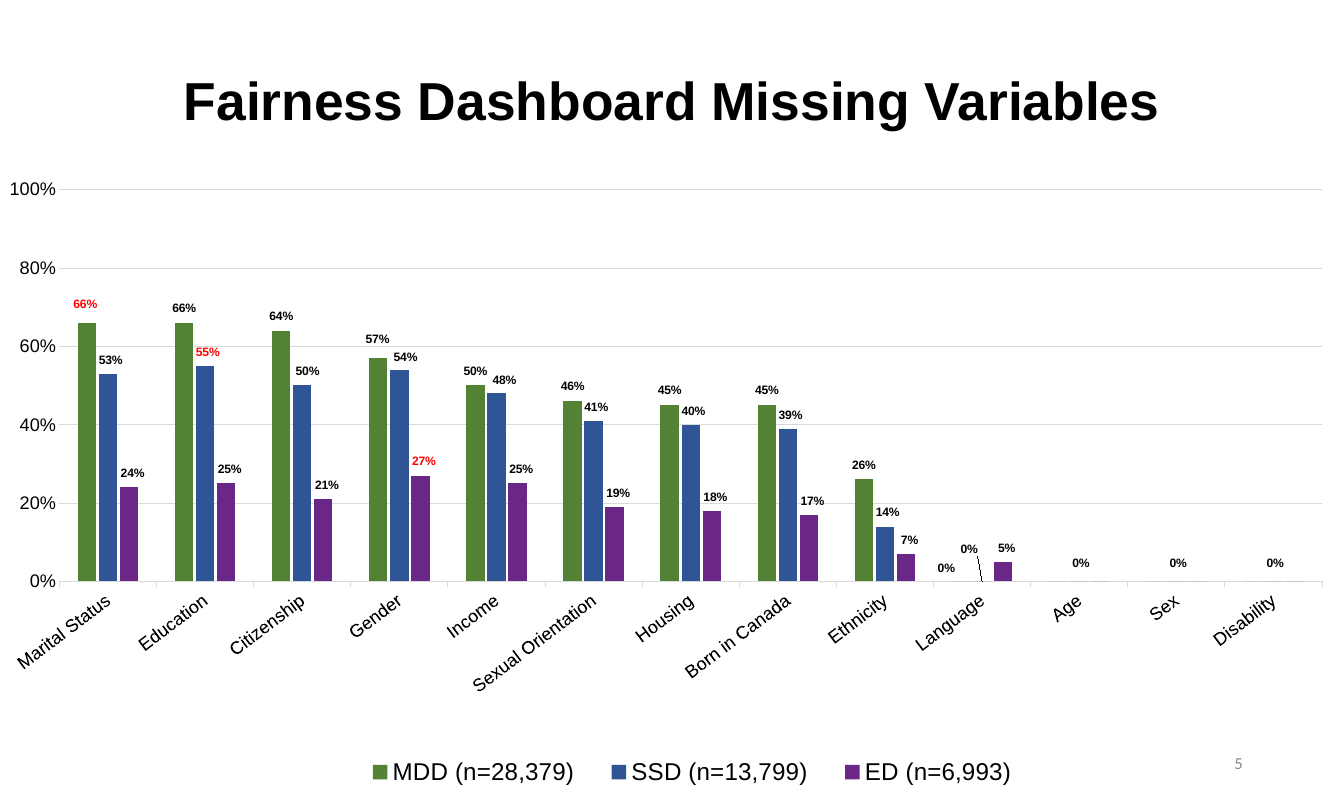
from dataclasses import dataclass, field

from lxml import etree
from pptx import Presentation
from pptx.chart.data import CategoryChartData
from pptx.dml.color import RGBColor
from pptx.enum.chart import (XL_CHART_TYPE, XL_LABEL_POSITION,
                             XL_LEGEND_POSITION, XL_TICK_MARK)
from pptx.enum.text import MSO_ANCHOR, PP_ALIGN
from pptx.oxml.ns import qn
from pptx.util import Inches, Pt

COLUMNS = XL_CHART_TYPE.COLUMN_CLUSTERED
ABOVE_BAR = XL_LABEL_POSITION.OUTSIDE_END
BOTTOM = XL_LEGEND_POSITION.BOTTOM
NO_TICK = XL_TICK_MARK.NONE
OUTER_TICK = XL_TICK_MARK.OUTSIDE
MIDDLE = MSO_ANCHOR.MIDDLE
CENTER = PP_ALIGN.CENTER
RIGHT = PP_ALIGN.RIGHT

BLACK = RGBColor(0x00, 0x00, 0x00)
RED = RGBColor(0xFF, 0x00, 0x00)
GREEN = RGBColor(0x54, 0x82, 0x35)
BLUE = RGBColor(0x2F, 0x55, 0x97)
PURPLE = RGBColor(0x6A, 0x27, 0x88)
GRID_GREY = RGBColor(0xD9, 0xD9, 0xD9)
NUMBER_GREY = RGBColor(0x88, 0x88, 0x88)

CHART_WIDTH, CHART_HEIGHT = 15.11, 7.96
VARIABLES = ["Marital Status", "Education", "Citizenship", "Gender", "Income",
             "Sexual Orientation", "Housing", "Born in Canada", "Ethnicity",
             "Language", "Age", "Sex", "Disability"]


@dataclass
class Diagnosis:
    """A series; nudges are label offsets in inches, special ones by category."""
    name: str
    color: RGBColor
    percents: list[int]
    labelled: int
    highlighted: int
    nudge: tuple[float, float]
    special_nudges: dict[int, tuple[float, float]] = field(default_factory=dict)


DIAGNOSES = [
    Diagnosis("MDD (n=28,379)", GREEN,
              [66, 66, 64, 57, 50, 46, 45, 45, 26, 0, 0, 0, 0], 10, 0, (0, -0.05),
              {0: (-0.02, -0.09), 3: (-0.01, -0.1), 9: (-0.17, -0.03)}),
    Diagnosis("SSD (n=13,799)", BLUE,
              [53, 55, 50, 54, 48, 41, 40, 39, 14, 0, 0, 0, 0], 13, 1, (0.03, -0.04),
              {2: (0.06, -0.04), 3: (0.07, -0.03), 4: (0.09, -0.03),
               9: (-0.15, -0.25), 10: (0.02, -0.09), 11: (0.02, -0.09),
               12: (0.02, -0.09)}),
    Diagnosis("ED (n=6,993)", PURPLE,
              [24, 25, 21, 27, 25, 19, 18, 17, 7, 5, 0, 0, 0], 10, 3, (0.04, -0.04)),
]


def style_font(font, size: float, color: RGBColor = BLACK, bold: bool = False,
               name: str = "Arial") -> None:
    font.size, font.bold, font.name = Pt(size), bold, name
    font.color.rgb = color


def write_line(shape, text: str, alignment, size: float, **style) -> None:
    frame = shape.text_frame
    frame.word_wrap = True
    frame.vertical_anchor = MIDDLE
    para = frame.paragraphs[0]
    para.alignment = alignment
    span = para.add_run()
    span.text = text
    style_font(span.font, size, **style)


def place(element, after: str, **settings) -> None:
    """Put a manual layout right behind the named child of a chart element."""
    for old in element.findall(qn("c:layout")):
        element.remove(old)
    layout = etree.Element(qn("c:layout"))
    manual = etree.SubElement(layout, qn("c:manualLayout"))
    for name, value in settings.items():
        etree.SubElement(manual, qn("c:" + name)).set("val", str(value))
    if after:
        element.find(qn(after)).addnext(layout)
    else:
        element.insert(0, layout)


def style_series(series, diagnosis: Diagnosis) -> None:
    series.format.fill.solid()
    series.format.fill.fore_color.rgb = diagnosis.color
    series.invert_if_negative = False
    labels = series.data_labels
    labels.show_value = False
    labels.number_format, labels.number_format_is_linked = "0%", False
    for index in range(diagnosis.labelled):
        label = series.points[index].data_label
        color = RED if index == diagnosis.highlighted else BLACK
        style_font(label.font, 10, color, bold=True)
        label.position = ABOVE_BAR
    for index, element in enumerate(series._element.xpath("c:dLbls/c:dLbl")):
        across, down = diagnosis.special_nudges.get(index, diagnosis.nudge)
        place(element, "c:idx", x=across / CHART_WIDTH, y=down / CHART_HEIGHT)


def style_axes(chart) -> None:
    variables, shares = chart.category_axis, chart.value_axis
    for axis in (variables, shares):
        style_font(axis.tick_labels.font, 15)
        axis.major_tick_mark = axis.minor_tick_mark = NO_TICK
    variables.major_tick_mark = OUTER_TICK
    variables._element.find(qn("c:txPr")).find(qn("a:bodyPr")).set("rot", "-2220000")
    shares.minimum_scale, shares.maximum_scale, shares.major_unit = 0, 1, 0.2
    shares.tick_labels.number_format = "0%"
    shares.tick_labels.number_format_is_linked = False
    shares.format.line.fill.background()
    for line in (variables.format.line, shares.major_gridlines.format.line):
        line.color.rgb = GRID_GREY
        line.width = Pt(0.75)


def add_missing_chart(page) -> None:
    data = CategoryChartData(number_format="0%")
    data.categories = VARIABLES
    for diagnosis in DIAGNOSES:
        data.add_series(diagnosis.name, [value / 100 for value in diagnosis.percents])
    chart = page.shapes.add_chart(COLUMNS, Inches(0.11), Inches(1.19),
                                  Inches(CHART_WIDTH), Inches(CHART_HEIGHT),
                                  data).chart
    chart.has_title = False
    style_font(chart.font, 10)
    plot = chart.plots[0]
    plot.gap_width, plot.overlap, plot.vary_by_categories = 200, -15, False
    for series, diagnosis in zip(plot.series, DIAGNOSES):
        style_series(series, diagnosis)
    style_axes(chart)
    chart.has_legend = True
    chart.legend.position = BOTTOM
    chart.legend.include_in_layout = False
    style_font(chart.legend.font, 20)
    place(chart.legend._element, "c:legendPos", xMode="edge", yMode="edge",
          x=0.25, y=0.93, w=0.53, h=0.06)
    place(chart._chartSpace.chart.plotArea, "", layoutTarget="inner",
          xMode="edge", yMode="edge", x=0.034, y=0.123, w=0.96, h=0.563)


def main() -> None:
    deck = Presentation()
    deck.slide_width, deck.slide_height = Inches(15.38), Inches(9.15)
    page = deck.slides.add_slide(deck.slide_layouts[5])
    title = page.shapes.title
    title.left, title.top = Inches(1.06), Inches(0.3)
    title.width, title.height = Inches(13.27), Inches(1.77)
    write_line(title, "Fairness Dashboard Missing Variables", CENTER, 44, bold=True)
    title.text_frame.paragraphs[0].line_spacing = 0.9
    number = page.shapes.add_textbox(Inches(10.86), Inches(8.48),
                                     Inches(3.46), Inches(0.49))
    write_line(number, "5", RIGHT, 13.8, color=NUMBER_GREY, name="Calibri")
    add_missing_chart(page)
    deck.save("out.pptx")


if __name__ == "__main__":
    main()
